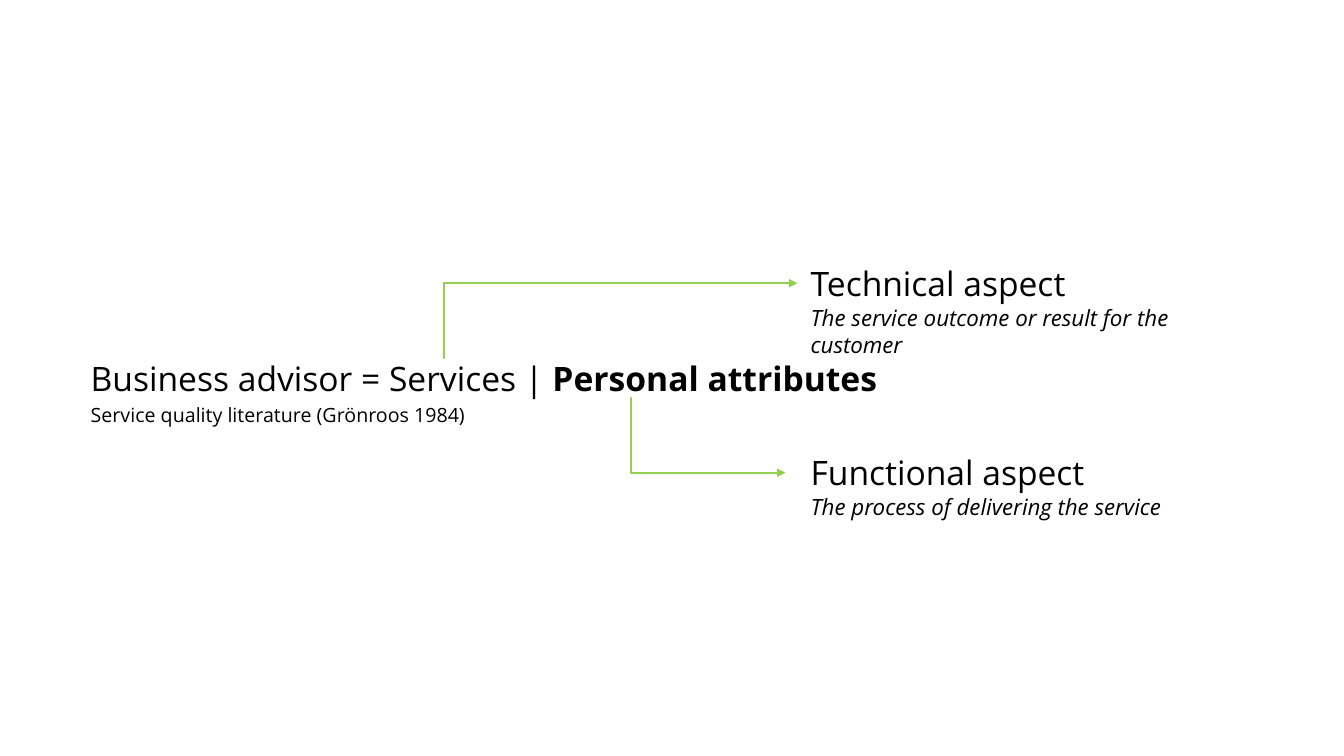
from lxml.etree import SubElement
from pptx import Presentation
from pptx.dml.color import RGBColor
from pptx.enum.shapes import MSO_CONNECTOR as Connector
from pptx.enum.text import MSO_AUTO_SIZE as AutoSize
from pptx.oxml.ns import qn
from pptx.util import Inches, Pt

COLORS = {"text": "000000", "arrow": "92D050"}
FONT = "Open Sans"
HEADING = {"size": Pt(24)}
STRONG = {"size": Pt(24), "bold": True}
DESCRIPTION = {"size": Pt(16), "italic": True}
CITATION = {"size": Pt(14)}
FRAME = {
    "margin_left": 0, "margin_right": 0, "margin_top": 0, "margin_bottom": 0,
    "word_wrap": True, "auto_size": AutoSize.SHAPE_TO_FIT_TEXT,
}
ASPECT_LEFT = 8.04


def set_format(target, values):
    """Set each named format value on the target."""
    for name, value in values.items():
        setattr(target, name, value)


def add_label(slide, left, top, width, height, *parts):
    """Add a one-paragraph label made of (wording, format) parts."""
    label = slide.shapes.add_textbox(
        Inches(left), Inches(top), Inches(width), Inches(height))
    set_format(label.text_frame, FRAME)
    paragraph = label.text_frame.paragraphs[0]
    for wording, values in parts:
        run = paragraph.add_run()
        run.text = wording
        set_format(run.font, {"name": FONT, **values})
        run.font.color.rgb = RGBColor.from_string(COLORS["text"])


def add_aspect(slide, top, title, description):
    """Add an aspect title with its description below."""
    add_label(slide, ASPECT_LEFT, top, 2.81, 0.4, (title, HEADING))
    add_label(slide, ASPECT_LEFT, top + 0.41, 4.5, 0.27, (description, DESCRIPTION))


def add_elbow_arrow(slide, start, end, bend):
    """Add an elbow arrow that bends at a share of its width."""
    arrow = slide.shapes.add_connector(
        Connector.ELBOW, *(Inches(value) for value in (*start, *end)))
    arrow.line.color.rgb = RGBColor.from_string(COLORS["arrow"])
    arrow.line.width = Pt(1.5)
    properties = arrow._element.spPr
    geometry = properties.find(qn("a:prstGeom"))
    guides = geometry.find(qn("a:avLst"))
    if guides is None:
        guides = SubElement(geometry, qn("a:avLst"))
    SubElement(guides, qn("a:gd"), name="adj1", fmla=f"val {round(bend * 100000)}")
    SubElement(properties.find(qn("a:ln")), qn("a:tailEnd"), type="triangle")
    SubElement(properties, qn("a:effectLst"))


def main():
    """Build the slide on the aspects of a business advisor."""
    deck = Presentation()
    deck.slide_width, deck.slide_height = Inches(13.33), Inches(7.5)
    slide = deck.slides.add_slide(deck.slide_layouts[6])

    add_label(slide, 0.9, 3.55, 11.8, 0.4,
              ("Business advisor = Services | ", HEADING),
              ("Personal attributes", STRONG))
    add_label(slide, 0.9, 4, 5.23, 0.24,
              ("Service quality literature (Grönroos 1984)", CITATION))
    add_aspect(slide, 2.61, "Technical aspect",
               "The service outcome or result for the customer")
    add_aspect(slide, 4.48, "Functional aspect",
               "The process of delivering the service")
    add_elbow_arrow(slide, (4.41, 3.55), (7.91, 2.81), -0.003)
    add_elbow_arrow(slide, (6.25, 3.95), (7.79, 4.69), 0.007)

    deck.save("out.pptx")


if __name__ == "__main__":
    main()
